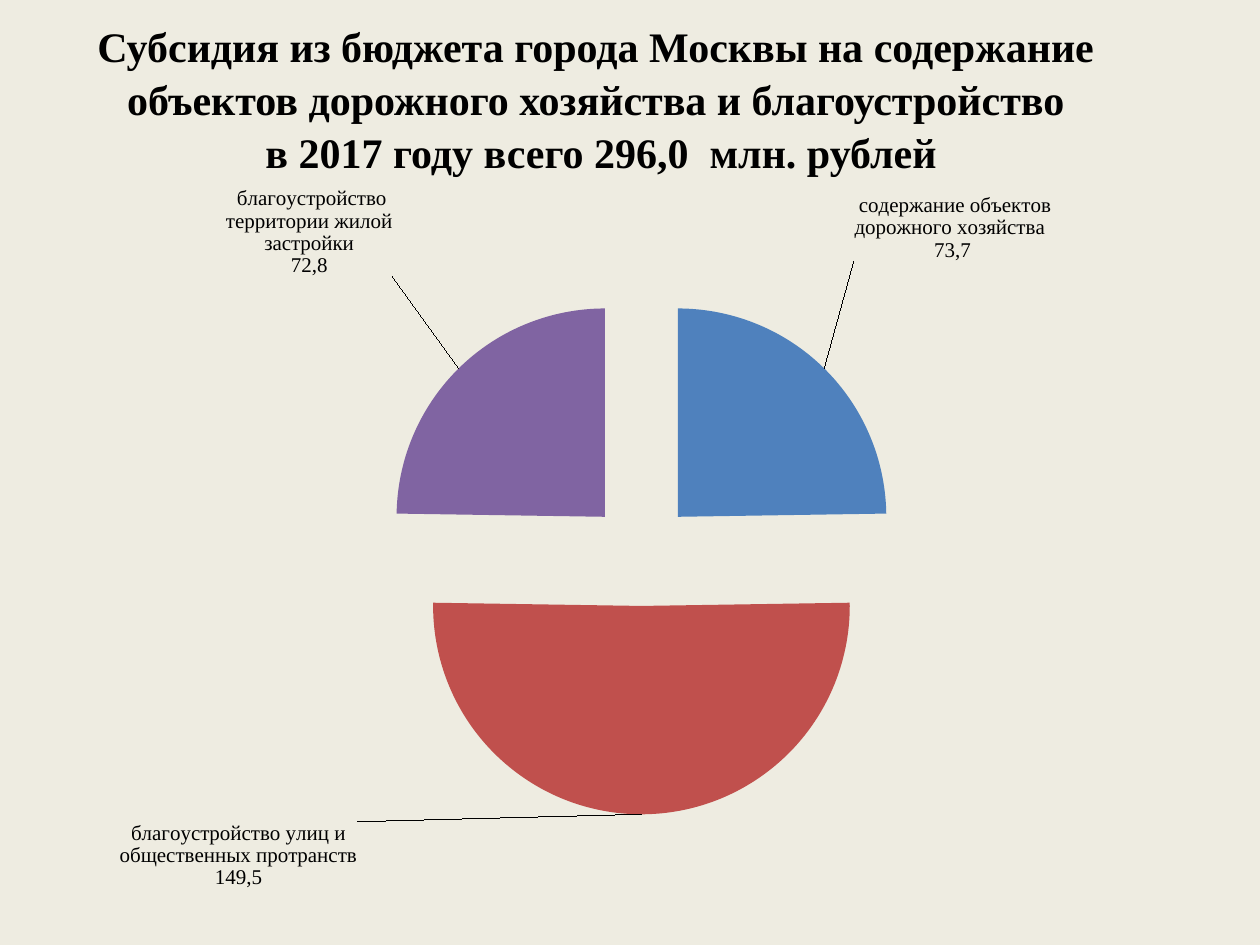
"""Build the slide on the 2017 subsidy for roads and landscaping."""
from copy import deepcopy
from dataclasses import dataclass
from typing import Optional

from lxml.etree import SubElement
from pptx import Presentation
from pptx.chart.data import CategoryChartData as ChartData
from pptx.dml.color import RGBColor as Rgb
from pptx.enum.chart import XL_CHART_TYPE as ChartType, XL_LABEL_POSITION as LabelPos
from pptx.enum.text import MSO_ANCHOR as Anchor, PP_ALIGN as Align
from pptx.oxml import parse_xml
from pptx.oxml.ns import nsdecls, qn
from pptx.util import Inches, Pt

COLORS = {
    "background": "EEECE1", "text": "000000", "roads": "4F81BD",
    "streets": "C0504D", "unused": "9BBB59", "housing": "8064A2",
}
SERIF = "Times New Roman"
WIDTH, HEIGHT = Inches(10), Inches(7.5)
HEADING = (
    "Субсидия из бюджета города Москвы на содержание ",
    "объектов дорожного хозяйства и благоустройство ",
    "в 2017 году всего 296,0  млн. рублей",
)


@dataclass(frozen=True)
class Slice:
    name: str
    share: Optional[int]
    color: str
    amount: str = ""
    shift: tuple[float, float] = (0, 0)


SLICES = (
    Slice(" содержание объектов дорожного хозяйства ", 25, "roads", "73,7", (0.02, -0.13)),
    Slice("благоустройство улиц и общественных протранств", 51, "streets", "149,5", (-0.33, 0)),
    Slice("", None, "unused"),
    Slice(" благоустройство территории жилой застройки", 25, "housing", "72,8", (-0.05, -0.11)),
)


def rgb(name: str) -> Rgb:
    return Rgb.from_string(COLORS[name])


def frame(left: float, top: float, width: float, height: float) -> tuple[int, ...]:
    """Turn shares of the slide into lengths."""
    return int(left * WIDTH), int(top * HEIGHT), int(width * WIDTH), int(height * HEIGHT)


def style(font, size: float, bold: bool = False) -> None:
    font.name, font.size, font.bold = SERIF, Pt(size), bold
    font.color.rgb = rgb("text")


def manual_layout(x: float, y: float, extent: Optional[tuple[float, float]] = None):
    """Make a chart layout element, with an inner plot size if one is given."""
    layout = parse_xml(f"<c:layout {nsdecls('c')}><c:manualLayout/></c:layout>")
    values = {"x": x, "y": y}
    if extent:
        values = {"layoutTarget": "inner", "xMode": "edge", "yMode": "edge",
                  **values, "w": extent[0], "h": extent[1]}
    for tag, value in values.items():
        SubElement(layout[0], qn(f"c:{tag}")).set("val", str(value))
    return layout


def write_heading(heading) -> None:
    heading.left, heading.top, heading.width, heading.height = frame(-0.035, 0.03, 1.024, 0.2)
    text = heading.text_frame
    text.vertical_anchor, text.word_wrap = Anchor.MIDDLE, True
    text.margin_bottom = Inches(0.45)
    paragraph = text.paragraphs[0]
    paragraph.alignment, paragraph.line_spacing = Align.CENTER, 1.05
    for number, line in enumerate(HEADING):
        if number:
            paragraph.add_line_break()
        run = paragraph.add_run()
        run.text = line
        style(run.font, 24, True)
    for line_break in paragraph._p.findall(qn("a:br")):
        line_break.append(deepcopy(run._r.rPr))


def label_slice(label, part: Slice) -> None:
    text = label.text_frame
    for paragraph, line in ((text.paragraphs[0], part.name), (text.add_paragraph(), part.amount)):
        run = paragraph.add_run()
        run.text = line
        style(run.font, 12)
    label.position = LabelPos.OUTSIDE_END
    label._dLbl.find(qn("c:idx")).addnext(manual_layout(*part.shift))


def draw_pie(slide) -> None:
    data = ChartData()
    data.categories = [part.name for part in SLICES]
    data.add_series("Series 1", [part.share for part in SLICES])
    chart = slide.shapes.add_chart(ChartType.PIE, *frame(0.012, 0.143, 0.969, 0.83), data).chart
    chart.has_legend = chart.has_title = False
    chart.font.name, chart.font.size = "Calibri", Pt(10)
    chart.font.color.rgb = rgb("text")

    area = chart._chartSpace.chart.plotArea
    for automatic in area.findall(qn("c:layout")):
        area.remove(automatic)
    area.insert(0, manual_layout(0.171, 0.202, (0.684, 0.664)))

    plot = chart.plots[0]
    plot.vary_by_categories = True
    series = plot.series[0]
    explosion = parse_xml(f'<c:explosion {nsdecls("c")} val="25"/>')
    series._element.find(qn("c:tx")).addnext(explosion)
    labels = series.data_labels
    labels.show_value = False
    labels.show_percentage = labels.show_category_name = True
    labels.position = LabelPos.OUTSIDE_END
    style(labels.font, 12)
    for number, part in enumerate(SLICES):
        point = series.points[number]
        point.format.fill.solid()
        point.format.fill.fore_color.rgb = rgb(part.color)
        if part.amount:
            label_slice(point.data_label, part)


def main() -> None:
    deck = Presentation()
    deck.slide_width, deck.slide_height = WIDTH, HEIGHT
    slide = deck.slides.add_slide(deck.slide_layouts[5])
    slide.background.fill.solid()
    slide.background.fill.fore_color.rgb = rgb("background")
    write_heading(slide.shapes.title)
    draw_pie(slide)
    deck.save("out.pptx")


if __name__ == "__main__":
    main()
